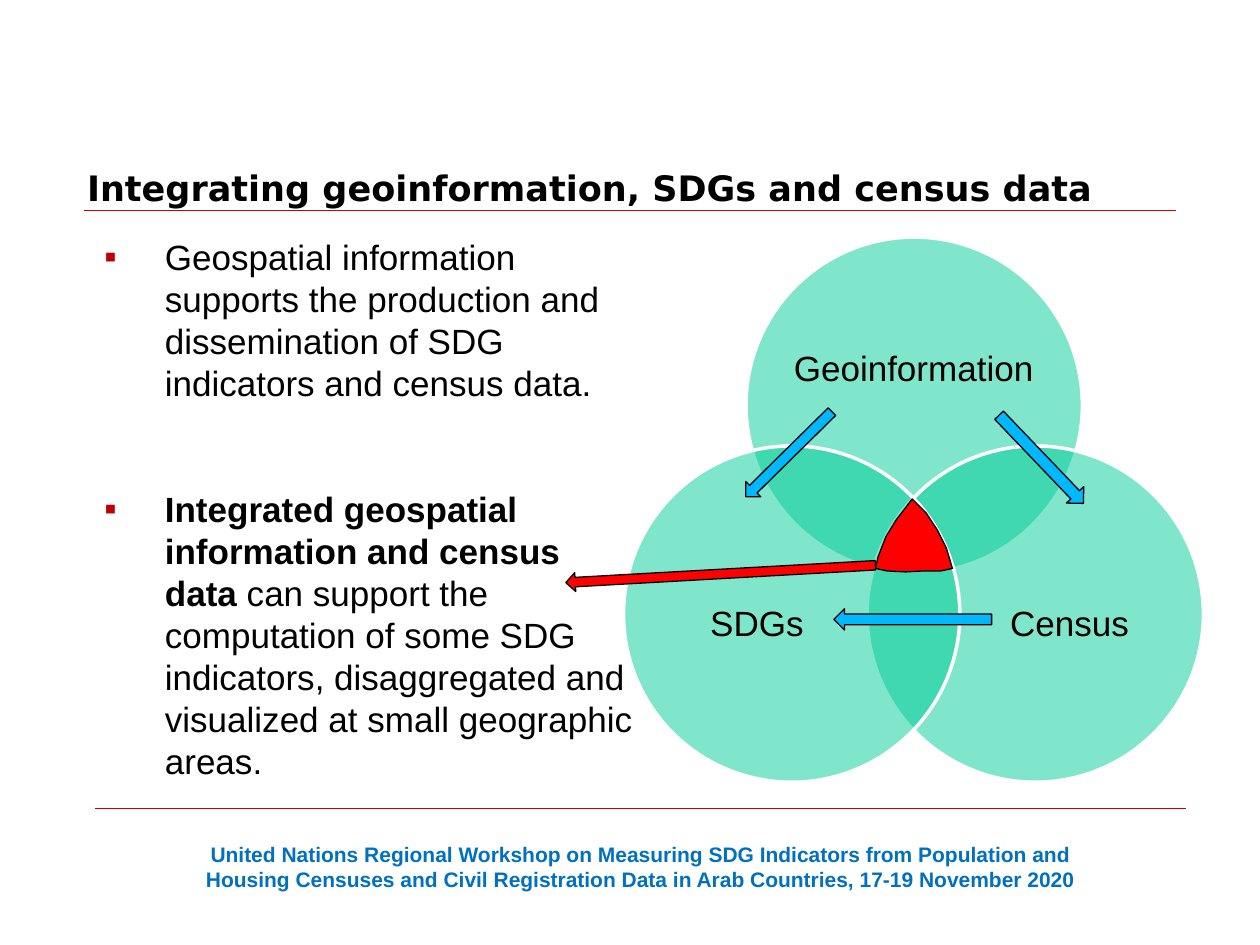
import pptx
import pptx.dml.color
import pptx.enum.shapes
import pptx.enum.text
import pptx.oxml.ns
import pptx.util
from lxml import etree

Cm, Pt = pptx.util.Cm, pptx.util.Pt
qn = pptx.oxml.ns.qn
SHAPES = pptx.enum.shapes.MSO_SHAPE
ALIGN = pptx.enum.text.PP_ALIGN
ANCHOR = pptx.enum.text.MSO_ANCHOR

COLORS = {
    "text": "000000", "footer": "0070C0", "bullet": "C00000", "rule": "CC0000",
    "circle": "00CC99", "ring": "FFFFFF", "flow": "00B8FF", "core": "FF0000",
}
CIRCLE_SIZE = 6.78
# Label, circle left and top, label box
CIRCLES = [
    ("Geoinformation", (15.04, 4.78), (15.93, 5.94, 4.98, 3.05)),
    ("Census", (17.48, 8.99), (19.53, 10.74, 4.06, 3.73)),
    ("SDGs", (12.57, 8.99), (13.23, 10.74, 4.06, 3.73)),
]
# Left, top, length, thickness, rotation
FLOW_ARROWS = [
    (14.68, 8.94, 2.44, 0.43, 135.4),
    (19.76, 9.02, 2.46, 0.48, 46.3),
    (16.81, 12.27, 3.18, 0.43, 180),
]
CORE_ARROW = (11.4, 11.38, 6.25, 0.38, 176.8)
CORE_OUTLINE = [
    (18.39, 10.06), (18.06, 10.49), (17.86, 10.82), (17.7, 11.23), (17.65, 11.46),
    (17.88, 11.51), (18.26, 11.53), (18.62, 11.51), (18.97, 11.51), (19.2, 11.46),
    (19.08, 11.05), (18.9, 10.69), (18.8, 10.54), (18.67, 10.34),
]
BODY = [
    [("Geospatial information supports the production and dissemination of "
      "SDG indicators and census data.", False)],
    [("Integrated geospatial information and census data ", True),
     ("can support the computation of some SDG indicators, disaggregated and "
      "visualized at small geographic areas.", False)],
]
FOOTER = [
    "United Nations Regional Workshop on Measuring SDG Indicators from Population and",
    "Housing Censuses and Civil Registration Data in Arab Countries, 17-19 November 2020",
]


def rgb(name):
    return pptx.dml.color.RGBColor.from_string(COLORS[name])


def place(shape, left, top, width, height):
    shape.left, shape.top = Cm(left), Cm(top)
    shape.width, shape.height = Cm(width), Cm(height)


def set_font(font, size, color="text", name="Arial", bold=None):
    font.name, font.size, font.bold = name, Pt(size), bold
    font.color.rgb = rgb(color)


def paint(shape, fill, line, width):
    shape.shadow.inherit = False
    shape.fill.solid()
    shape.fill.fore_color.rgb = rgb(fill)
    shape.line.color.rgb = rgb(line)
    shape.line.width = Pt(width)


def add_rule(page, left, top):
    rule = page.shapes.add_connector(
        pptx.enum.shapes.MSO_CONNECTOR.STRAIGHT,
        Cm(left), Cm(top), Cm(left + 22), Cm(top))
    rule.line.color.rgb = rgb("rule")
    rule.line.width = Pt(0.25)
    etree.SubElement(rule._element.spPr, qn("a:effectLst"))


def add_text(page, lines, area, size, color="text", bold=None):
    box = page.shapes.add_textbox(*map(Cm, area))
    frame = box.text_frame
    frame.word_wrap = True
    frame.text = "\n".join(lines)
    for para in frame.paragraphs:
        para.alignment = ALIGN.CENTER
        set_font(para.font, size, color, bold=bold)
    return frame


def add_circle(page, label, corner, label_area):
    circle = page.shapes.add_shape(
        SHAPES.OVAL, *map(Cm, (*corner, CIRCLE_SIZE, CIRCLE_SIZE)))
    paint(circle, "circle", "ring", 2)
    color = circle._element.spPr.find(qn("a:solidFill")).find(qn("a:srgbClr"))
    etree.SubElement(color, qn("a:alpha"), val="50000")
    frame = add_text(page, [label], label_area, 20)
    frame.margin_left = frame.margin_right = 0
    frame.margin_top = frame.margin_bottom = 0
    frame.vertical_anchor = ANCHOR.MIDDLE
    frame.paragraphs[0].line_spacing = 0.9


def add_arrow(page, left, top, length, thickness, rotation, fill):
    arrow = page.shapes.add_shape(
        SHAPES.RIGHT_ARROW, *map(Cm, (left, top, length, thickness)))
    arrow.rotation = rotation
    paint(arrow, fill, "text", 0.75)


def add_core(page):
    points = [(Cm(x), Cm(y)) for x, y in CORE_OUTLINE]
    builder = page.shapes.build_freeform(*points[0])
    builder.add_line_segments(points[1:], close=True)
    paint(builder.convert_to_shape(), "core", "text", 0.75)


def add_bullet(para):
    props = para._p.get_or_add_pPr()
    props.set("marL", str(Cm(2.51)))
    props.set("indent", str(-Cm(1.22)))
    color = etree.SubElement(props, qn("a:buClr"))
    etree.SubElement(color, qn("a:srgbClr"), val=COLORS["bullet"])
    etree.SubElement(props, qn("a:buFont"), typeface="Arial")
    etree.SubElement(props, qn("a:buChar"), char="▪")


def fill_title(title):
    place(title, 1.5, 0.86, 24.13, 3.48)
    frame = title.text_frame
    frame.text = "Integrating geoinformation, SDGs and census data"
    frame.auto_size = pptx.enum.text.MSO_AUTO_SIZE.NONE
    frame.vertical_anchor = ANCHOR.BOTTOM
    para = frame.paragraphs[0]
    para.alignment = ALIGN.LEFT
    set_font(para.font, 20, name="DejaVu Sans", bold=True)


def fill_body(body):
    place(body, 0.56, 4.62, 12.47, 10.49)
    frame = body.text_frame
    frame.auto_size = pptx.enum.text.MSO_AUTO_SIZE.NONE
    for index, spans in enumerate(BODY):
        para = frame.add_paragraph() if index else frame.paragraphs[0]
        add_bullet(para)
        para.line_spacing = Pt(24)
        para.space_before = Pt(48 if index else 0)
        set_font(para.font, 20)
        for text, bold in spans:
            span = para.add_run()
            span.text = text
            span.font.bold = bold


def main():
    deck = pptx.Presentation()
    deck.slide_width, deck.slide_height = Cm(25.4), Cm(19.05)
    page = deck.slides.add_slide(deck.slide_layouts[1])

    # Rules and footer
    add_rule(page, 1.91, 16.3)
    add_rule(page, 1.7, 4.24)
    add_text(page, FOOTER, (1.91, 16.84, 22.02, 1.27), 12, "footer", True)

    # Title and list
    fill_title(page.shapes.title)
    fill_body(page.placeholders[1])

    # Overlapping circles with their arrows
    for circle in CIRCLES:
        add_circle(page, *circle)
    for arrow in FLOW_ARROWS:
        add_arrow(page, *arrow, "flow")
    add_core(page)
    add_arrow(page, *CORE_ARROW, "core")

    deck.save("out.pptx")


if __name__ == "__main__":
    main()
